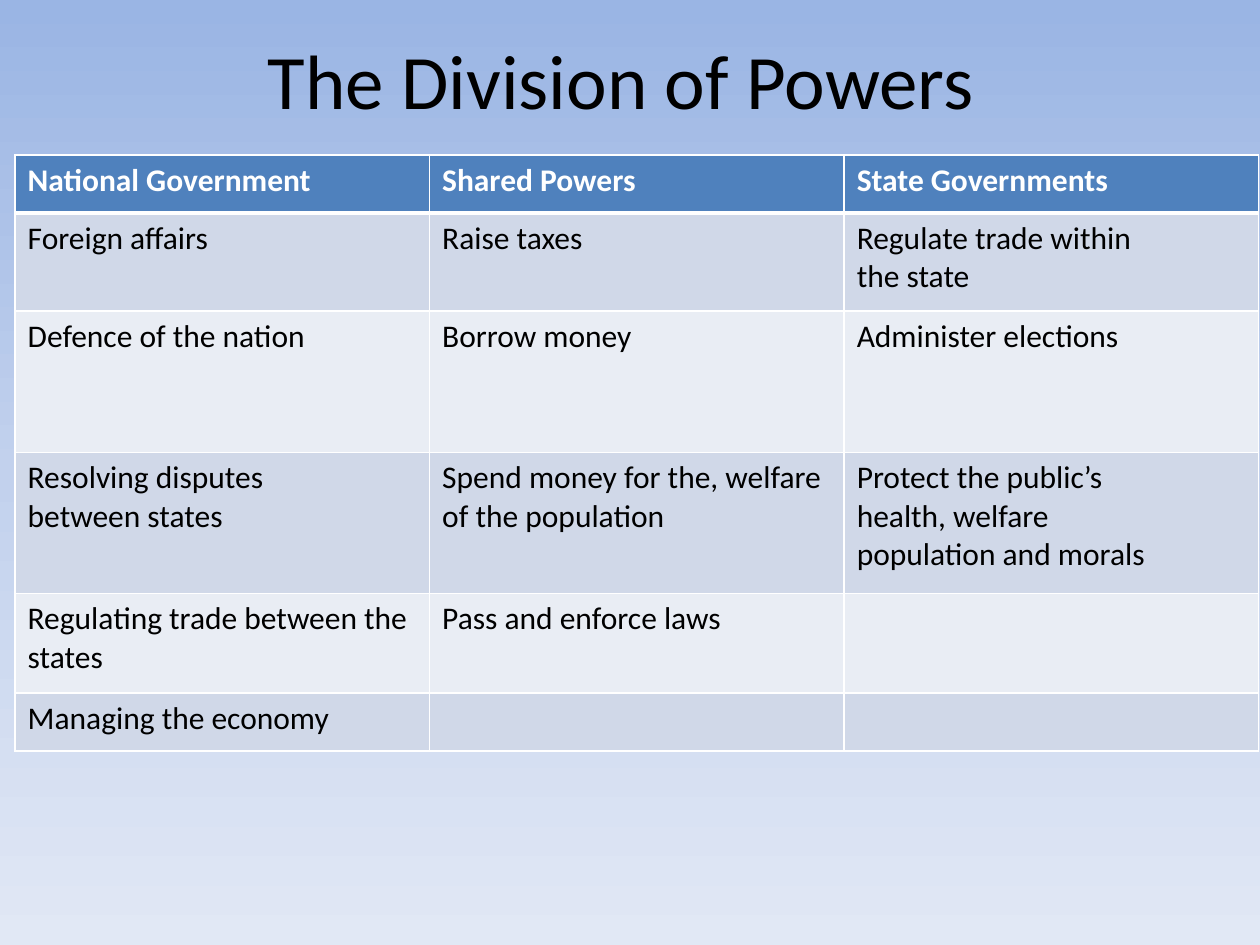
from copy import deepcopy
from dataclasses import dataclass

from lxml.etree import SubElement
from pptx import Presentation
from pptx.dml.color import RGBColor
from pptx.enum.text import MSO_ANCHOR, PP_ALIGN
from pptx.oxml.ns import qn
from pptx.util import Inches, Pt


@dataclass(frozen=True)
class Theme:
    font: str = "Calibri"
    title_size: int = 44
    table_size: int = 18
    text: str = "000000"
    header_text: str = "FFFFFF"
    header_fill: str = "4F81BD"
    band_fills: tuple = ("D0D8E8", "E9EDF4")
    border: str = "FFFFFF"
    border_width: int = 1
    header_rule_width: int = 3
    background: tuple = ((0, "9AB5E4"), (0.5, "C2D1ED"), (1, "E1E8F5"))


HEADERS = ["National Government", "Shared Powers", "State Governments"]
POWERS = [
    ["Foreign affairs", "Raise taxes", "Regulate trade within\nthe state"],
    ["Defence of the nation", "Borrow money", "Administer elections"],
    ["Resolving disputes\nbetween states",
     "Spend money for the, welfare of the population",
     "Protect the public’s\nhealth, welfare\npopulation and morals"],
    ["Regulating trade between the states", "Pass and enforce laws", ""],
    ["Managing the economy", "", ""],
]
ROW_HEIGHTS = [0.46, 0.78, 1.12, 1.12, 0.79, 0.46]


class SlideBuilder:
    def __init__(self, slide, theme):
        self.slide = slide
        self.theme = theme

    def background(self):
        fill = self.slide.background.fill
        fill.gradient()
        fill.gradient_angle = 270
        stop_list = next(self.slide.element.iter(qn("a:gsLst")))
        stop_list.append(deepcopy(stop_list[0]))
        for stop, (position, color) in zip(fill.gradient_stops, self.theme.background):
            stop.position = position
            stop.color.rgb = RGBColor.from_string(color)

    def format_text(self, frame, size, color, bold=False):
        for para in frame.paragraphs:
            for span in para.runs:
                span.font.name = self.theme.font
                span.font.size = Pt(size)
                span.font.bold = bold
                span.font.color.rgb = RGBColor.from_string(color)

    def title(self, text, left, top, width, height):
        box = self.slide.shapes.add_textbox(
            Inches(left), Inches(top), Inches(width), Inches(height))
        frame = box.text_frame
        frame.word_wrap = True
        frame.vertical_anchor = MSO_ANCHOR.MIDDLE
        frame.text = text
        frame.paragraphs[0].alignment = PP_ALIGN.CENTER
        self.format_text(frame, self.theme.title_size, self.theme.text)

    def cell_borders(self, cell, top, bottom):
        """Draw all four sides; top and bottom are widths in points."""
        side = self.theme.border_width
        properties = cell._tc.get_or_add_tcPr()
        for tag, width in (("lnL", side), ("lnR", side), ("lnT", top), ("lnB", bottom)):
            line = SubElement(properties, qn(f"a:{tag}"), w=str(Pt(width)))
            solid = SubElement(line, qn("a:solidFill"))
            SubElement(solid, qn("a:srgbClr"), val=self.theme.border)

    def table(self, rows, left, top, column_width, row_heights):
        theme = self.theme
        columns = len(rows[0])
        table = self.slide.shapes.add_table(
            len(rows), columns, Inches(left), Inches(top),
            Inches(column_width * columns), Inches(sum(row_heights))).table
        for column in table.columns:
            column.width = Inches(column_width)
        for index, (texts, height) in enumerate(zip(rows, row_heights)):
            table.rows[index].height = Inches(height)
            is_header = index == 0
            fill = theme.header_fill if is_header else theme.band_fills[(index - 1) % 2]
            color = theme.header_text if is_header else theme.text
            above = theme.header_rule_width if index == 1 else theme.border_width
            below = theme.header_rule_width if is_header else theme.border_width
            for cell, text in zip(table.rows[index].cells, texts):
                self.cell_borders(cell, above, below)
                cell.fill.solid()
                cell.fill.fore_color.rgb = RGBColor.from_string(fill)
                cell.text_frame.text = text
                self.format_text(cell.text_frame, theme.table_size, color, is_header)


def main():
    deck = Presentation()
    deck.slide_width, deck.slide_height = Inches(10), Inches(7.5)
    page = SlideBuilder(deck.slides.add_slide(deck.slide_layouts[6]), Theme())
    page.background()
    page.title("The Division of Powers", 0.43, 0, 9, 1.25)
    page.table([HEADERS, *POWERS], 0.12, 1.23, 3.29, ROW_HEIGHTS)
    deck.save("out.pptx")


if __name__ == "__main__":
    main()
